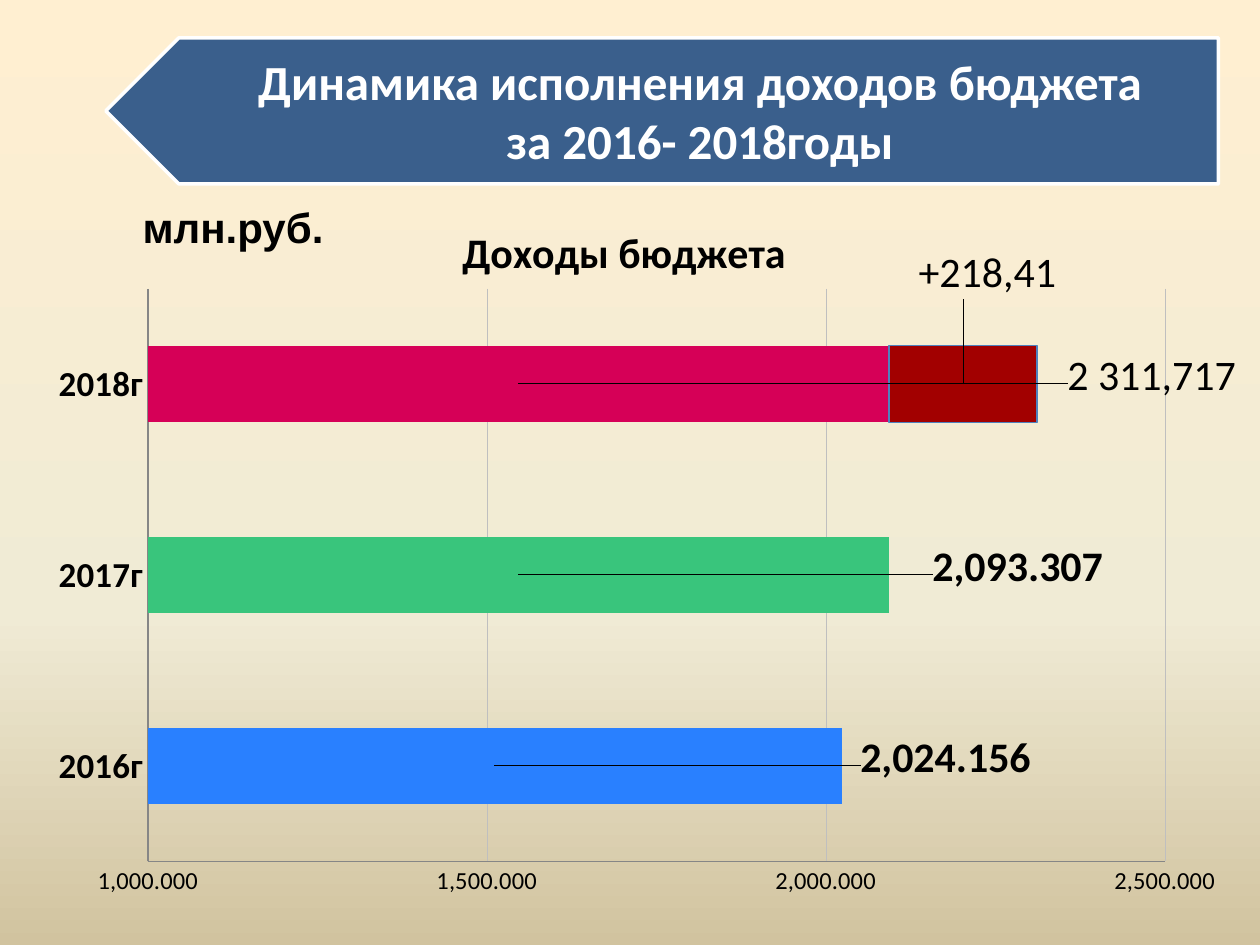
import copy

import pptx
import pptx.chart.data
import pptx.dml.color
import pptx.enum.chart
import pptx.enum.shapes
import pptx.enum.text
import pptx.oxml
import pptx.oxml.ns
import pptx.util
from pptx.util import Inches

NUMBER_FORMAT = "#,##0.000"


def color(value):
    return pptx.dml.color.RGBColor.from_string(value)


def set_font(font, size, bold=False, name="Calibri", fill="000000"):
    font.size = pptx.util.Pt(size)
    font.bold = bold
    font.name = name
    font.color.rgb = color(fill)


def set_background(slide, stops):
    """Fill the slide with a gradient running from top to bottom."""
    fill = slide.background.fill
    fill.gradient()
    fill.gradient_angle = 270
    stop_list = fill.gradient_stops[0]._gs.getparent()
    while len(stop_list) < len(stops):
        stop_list.append(copy.deepcopy(stop_list[0]))
    for stop, (position, value) in zip(fill.gradient_stops, stops):
        stop.position = position
        stop.color.rgb = color(value)


def add_text(slide, left, top, width, height, lines, size, **font):
    text_box = slide.shapes.add_textbox(
        Inches(left), Inches(top), Inches(width), Inches(height))
    frame = text_box.text_frame
    frame.word_wrap = True
    frame.text = "\n".join(lines)
    for paragraph in frame.paragraphs:
        paragraph.alignment = pptx.enum.text.PP_ALIGN.CENTER
        set_font(paragraph.font, size, bold=True, **font)
    return frame


def add_header(slide):
    banner = slide.shapes.add_shape(
        pptx.enum.shapes.MSO_SHAPE.PENTAGON,
        Inches(0.84), Inches(0.3), Inches(8.83), Inches(1.16))
    banner.rotation = 180
    banner.shadow.inherit = False
    banner.fill.solid()
    banner.fill.fore_color.rgb = color("3A5F8C")
    banner.line.color.rgb = color("FFFFFF")
    banner.line.width = pptx.util.Pt(2)

    lines = ["Динамика исполнения доходов бюджета", "за 2016- 2018годы"]
    frame = add_text(slide, 1.14, 0.3, 8.54, 1.16, lines, 28, fill="FFFFFF")
    frame.vertical_anchor = pptx.enum.text.MSO_ANCHOR.MIDDLE
    frame.margin_left, frame.margin_right = Inches(0.51), Inches(0.22)
    frame.margin_top = frame.margin_bottom = Inches(0.12)


def make_layout(x, y, width=None, height=None):
    """Manual chart layout; with a size it places the inner plot area."""
    head, tail = "", ""
    if width is not None:
        head = '<c:layoutTarget val="inner"/>'
        tail = f'<c:w val="{width}"/><c:h val="{height}"/>'
    if width is not None:
        head += '<c:xMode val="edge"/><c:yMode val="edge"/>'
    return pptx.oxml.parse_xml(
        f'<c:layout {pptx.oxml.ns.nsdecls("c")}><c:manualLayout>{head}'
        f'<c:x val="{x}"/><c:y val="{y}"/>{tail}</c:manualLayout></c:layout>')


def add_label(series, index, x, y, text=None):
    """Label one bar, moved from its centre by fractions of the chart."""
    label = series.points[index].data_label
    if text:
        frame = label.text_frame
        frame.text = text
        set_font(frame.paragraphs[0].runs[0].font, 24)
    else:
        set_font(label.font, 24, bold=True)
    label._get_or_add_dLbl().insert(1, make_layout(x, y))


def style_axes(chart):
    none = pptx.enum.chart.XL_TICK_MARK.NONE
    for axis, size, bold in ((chart.category_axis, 20, True),
                             (chart.value_axis, 14, False)):
        axis.major_tick_mark = axis.minor_tick_mark = none
        axis.format.line.color.rgb = color("868686")
        set_font(axis.tick_labels.font, size, bold)
    axis = chart.value_axis
    axis.minimum_scale, axis.maximum_scale, axis.major_unit = 1000, 2500, 500
    axis.tick_labels.number_format = NUMBER_FORMAT
    axis.tick_labels.number_format_is_linked = False
    grid = axis.major_gridlines.format.line
    grid.color.rgb = color("BFBFBF")
    grid.width = pptx.util.Pt(0.25)


def add_income_chart(slide):
    data = pptx.chart.data.CategoryChartData(number_format=NUMBER_FORMAT)
    data.categories = ["2016г", "2017г", "2018г"]
    data.add_series("Series 1", (2024.156, 2093.307, 2093.307))
    data.add_series("Series 2", (None, None, 218.41))
    chart = slide.shapes.add_chart(
        pptx.enum.chart.XL_CHART_TYPE.BAR_STACKED,
        Inches(0.12), Inches(1.55), Inches(9.69), Inches(5.83), data).chart
    chart.has_legend = False
    set_font(chart.font, 10)

    # Title and plot area
    title = chart.chart_title
    title.text_frame.text = "Доходы бюджета"
    set_font(title.text_frame.paragraphs[0].runs[0].font, 24, bold=True)
    title.include_in_layout = False
    plot_area = chart._chartSpace.chart.plotArea
    for old_layout in plot_area.findall(pptx.oxml.ns.qn("c:layout")):
        plot_area.remove(old_layout)
    plot_area.insert(0, make_layout(0.109, 0.127, 0.835, 0.78))
    style_axes(chart)

    # Bars
    plot = chart.plots[0]
    plot.gap_width, plot.overlap, plot.vary_by_categories = 150, 100, False
    base, growth = plot.series
    for series, value in ((base, "4F81BD"), (growth, "A20000")):
        series.format.fill.solid()
        series.format.fill.fore_color.rgb = color(value)
    for index, value in enumerate(("2980FF", "39C57C", "D60057")):
        fill = base.points[index].format.fill
        fill.solid()
        fill.fore_color.rgb = color(value)
    growth.format.line.color.rgb = color("4F81BD")
    growth.format.line.width = pptx.util.Pt(0.75)

    # Labels
    for series in (base, growth):
        labels = series.data_labels
        labels.show_value = True
        labels.number_format = NUMBER_FORMAT
        labels.number_format_is_linked = False
        set_font(labels.font, 24, bold=True)
    add_label(base, 0, 0.37, -0.01)
    add_label(base, 1, 0.41, -0.01)
    add_label(base, 2, 0.52, -0.01, "2 311,717")
    add_label(growth, 2, 0.02, -0.15, "+218,41")


def main():
    presentation = pptx.Presentation()
    presentation.slide_width = Inches(10)
    presentation.slide_height = Inches(7.5)
    slide = presentation.slides.add_slide(presentation.slide_layouts[6])
    set_background(slide, [(0, "FFEFD1"), (0.65, "F0EBD5"), (1, "D1C39F")])
    add_text(slide, 0.75, 1.55, 2.2, 0.5, ["млн.руб."], 24, name="Arial")
    add_header(slide)
    add_income_chart(slide)
    presentation.save("out.pptx")


if __name__ == "__main__":
    main()
